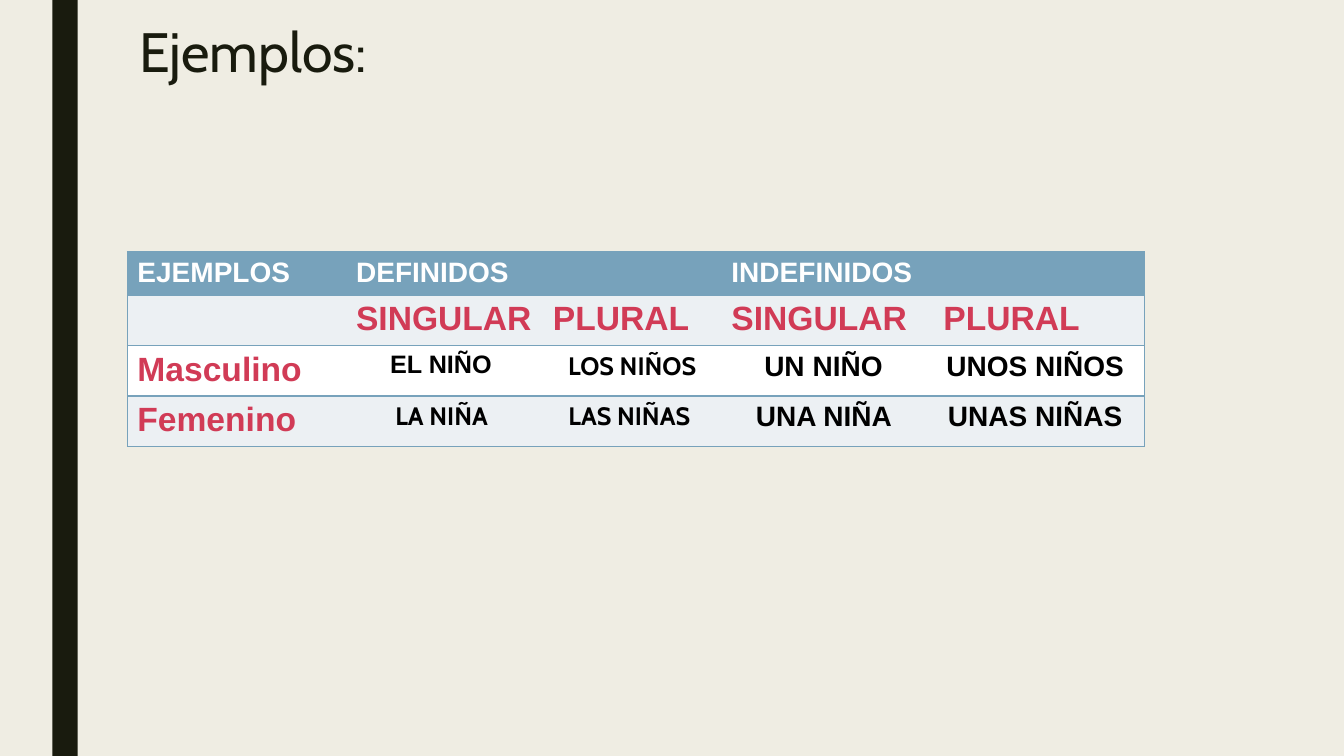
from dataclasses import dataclass

from lxml.etree import SubElement
from pptx import Presentation
from pptx.dml.color import RGBColor as RGB
from pptx.enum.shapes import MSO_SHAPE as Shape
from pptx.enum.text import MSO_ANCHOR as Anchor, MSO_AUTO_SIZE as AutoSize, PP_ALIGN as Align
from pptx.oxml.ns import qn
from pptx.util import Cm, Pt


@dataclass(frozen=True)
class Theme:
    paper: str = "EFEDE3"
    ink: str = "191B0E"
    blue: str = "77A2BB"
    band: str = "ECF0F3"
    white: str = "FFFFFF"
    red: str = "D13B56"
    black: str = "000000"
    title_font: str = "Cabin"
    table_font: str = "Arial"
    title_size: float = 39.6
    label_size: int = 24
    large_size: int = 20
    small_size: int = 18


@dataclass(frozen=True)
class CellStyle:
    size: int
    color: str
    font: str
    align: Align = Align.LEFT


class SlideBuilder:
    def __init__(self, prs, theme):
        self.theme = theme
        self.s = prs.slides.add_slide(prs.slide_layouts[5])
        self.paint(self.s.background.fill, theme.paper)

    def paint(self, fill, color):
        fill.solid()
        fill.fore_color.rgb = RGB.from_string(color)

    def add_run(self, p, text, size, color, font, bold=False):
        r = p.add_run()
        r.text = text
        r.font.size = Pt(size)
        r.font.name = font
        r.font.bold = bold
        r.font.color.rgb = RGB.from_string(color)

    def side_bar(self, left, width, height):
        sp = self.s.shapes.add_shape(Shape.RECTANGLE, left, 0, width, height)
        sp.shadow.inherit = False
        self.paint(sp.fill, self.theme.ink)
        sp.line.fill.background()

    def title(self, text, left, top, width, height):
        t = self.theme
        sp = self.s.shapes.title
        sp.left, sp.top, sp.width, sp.height = left, top, width, height
        tf = sp.text_frame
        tf.auto_size = AutoSize.NONE
        tf.vertical_anchor = Anchor.BOTTOM
        p = tf.paragraphs[0]
        p.alignment = Align.LEFT
        p.line_spacing = 0.89
        self.add_run(p, text, t.title_size, t.ink, t.title_font)

    def borders(self, cell, visible):
        """Draw the visible sides (letters of LRTB) and clear the others."""
        tcPr = cell._tc.get_or_add_tcPr()
        for side in "LRTB":
            ln = SubElement(tcPr, qn(f"a:ln{side}"), w=str(Pt(1)))
            if side in visible:
                fill = SubElement(ln, qn("a:solidFill"))
                SubElement(fill, qn("a:srgbClr"), val=self.theme.blue)
            else:
                SubElement(ln, qn("a:noFill"))

    def table(self, left, top, widths, heights, rows, fills):
        """Each cell is a (text, style) pair; each row has one fill."""
        tbl = self.s.shapes.add_table(
            len(rows), len(widths), left, top, sum(widths), sum(heights)).table
        tbl.first_row = tbl.horz_banding = False
        for column, width in zip(tbl.columns, widths):
            column.width = width
        for i, (row, height, fill) in enumerate(zip(rows, heights, fills)):
            tbl.rows[i].height = height
            for j, (text, style) in enumerate(row):
                cell = tbl.cell(i, j)
                sides = "TB" + "L" * (j == 0) + "R" * (j == len(row) - 1)
                self.borders(cell, sides)
                self.paint(cell.fill, fill)
                p = cell.text_frame.paragraphs[0]
                p.alignment = style.align
                if text:
                    self.add_run(p, text, style.size, style.color, style.font, bold=True)


def main():
    prs = Presentation()
    prs.slide_width, prs.slide_height = Cm(33.87), Cm(19.05)
    t = Theme()
    builder = SlideBuilder(prs, t)
    builder.side_bar(Cm(1.32), Cm(0.64), prs.slide_height)
    builder.title("Ejemplos:", Cm(3.25), Cm(0.41), Cm(26.67), Cm(1.85))

    head = CellStyle(t.large_size, t.white, t.table_font)
    label = CellStyle(t.label_size, t.red, t.table_font)
    small = CellStyle(t.small_size, t.black, t.table_font, Align.CENTER)
    cabin = CellStyle(t.small_size, t.black, t.title_font, Align.CENTER)
    large = CellStyle(t.large_size, t.black, t.table_font, Align.CENTER)
    headers = ["EJEMPLOS", "DEFINIDOS", "", "INDEFINIDOS", ""]
    numbers = [""] + ["SINGULAR", "PLURAL"] * 2
    rows = [
        [(text, head) for text in headers],
        [(text, label) for text in numbers],
        [("Masculino", label), ("EL NIÑO ", small), ("LOS NIÑOS", cabin),
         ("UN NIÑO ", large), ("UNOS NIÑOS ", large)],
        [("Femenino", label), ("LA NIÑA ", cabin), ("LAS NIÑAS ", cabin),
         ("UNA NIÑA ", large), ("UNAS NIÑAS ", large)],
    ]
    widths = [Cm(w) for w in (5.51, 4.96, 4.5, 5.34, 5.33)]
    heights = [Cm(1.1)] + [Cm(1.27)] * 3
    builder.table(Cm(3.21), Cm(6.34), widths, heights, rows,
                  [t.blue, t.band, t.white, t.band])
    prs.save("out.pptx")


if __name__ == "__main__":
    main()
